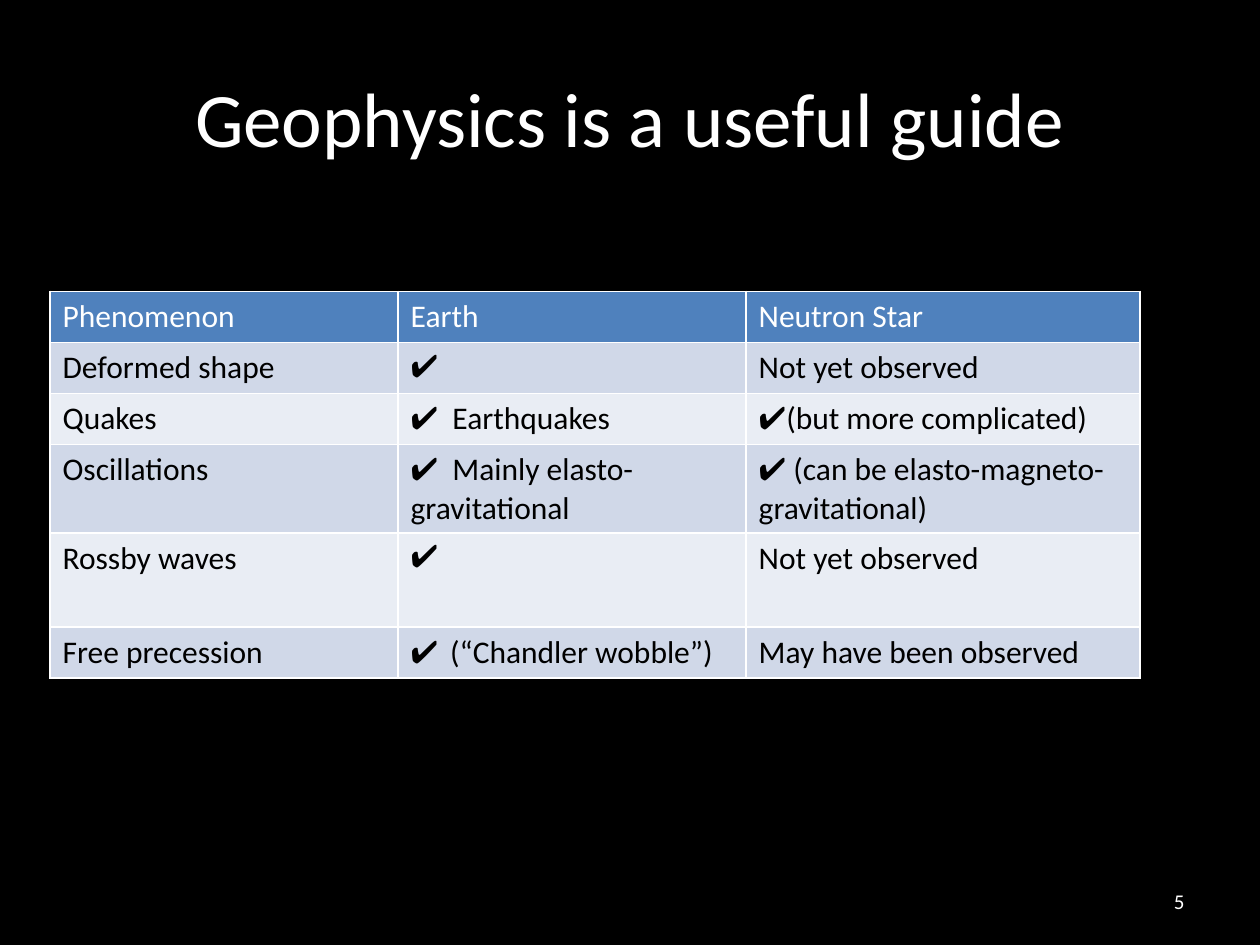
from dataclasses import dataclass

from lxml.etree import SubElement
from pptx import Presentation
from pptx.dml.color import RGBColor as RGB
from pptx.enum.text import MSO_ANCHOR as Anchor, PP_ALIGN as Align
from pptx.oxml.ns import qn
from pptx.util import Pt


@dataclass(frozen=True)
class Theme:
    background: RGB = RGB(0, 0, 0)
    light: RGB = RGB(255, 255, 255)
    dark: RGB = RGB(0, 0, 0)
    header: RGB = RGB(0x4F, 0x81, 0xBD)
    bands: tuple = (RGB(0xD0, 0xD8, 0xE8), RGB(0xE9, 0xED, 0xF4))
    face: str = "Calibri"
    check_face: str = "Arial"
    title_size: int = 44
    table_size: int = 18
    number_size: int = 12


THEME = Theme()
CHECK = "✔"
BULLET = "• "
COLUMN_WIDTHS = (198.9, 198.9, 225)
ROW_HEIGHTS = (29.2, 29.2, 29.2, 29.2, 53.8, 29.2)
PHENOMENA = (
    ("Phenomenon", "Earth", "Neutron Star"),
    ("Deformed shape", "✔", "Not yet observed"),
    ("Quakes", "✔  Earthquakes", "✔(but more complicated)"),
    ("Oscillations", "✔  Mainly elasto-gravitational",
     "✔ (can be elasto-magneto-gravitational)"),
    ("Rossby waves", "✔", "Not yet observed"),
    ("Free precession", BULLET + "(“Chandler wobble”)", "May have been observed"),
)


def style(paragraph, size, color):
    paragraph.font.name = THEME.face
    paragraph.font.size = Pt(size)
    paragraph.font.bold = False
    paragraph.font.color.rgb = color


def add_label(slide, text, left, top, width, height, size, align):
    label = slide.shapes.add_textbox(Pt(left), Pt(top), Pt(width), Pt(height))
    frame = label.text_frame
    frame.word_wrap = True
    frame.vertical_anchor = Anchor.MIDDLE
    line = frame.paragraphs[0]
    line.text = text
    line.alignment = align
    style(line, size, THEME.light)


def add_check_bullet(paragraph):
    properties = paragraph._p.get_or_add_pPr()
    properties.set("marL", str(Pt(22.5)))
    properties.set("indent", str(-Pt(22.5)))
    font = SubElement(properties, qn("a:buFont"))
    font.set("typeface", THEME.check_face)
    SubElement(properties, qn("a:buChar")).set("char", CHECK)


def add_borders(cell):
    properties = cell._tc.get_or_add_tcPr()
    for position, side in enumerate(("lnL", "lnR", "lnT", "lnB")):
        border = SubElement(properties, qn(f"a:{side}"))
        border.set("w", str(Pt(1)))
        fill = SubElement(border, qn("a:solidFill"))
        SubElement(fill, qn("a:srgbClr")).set("val", str(THEME.light))
        properties.insert(position, border)


def fill_cell(cell, text, fill, color):
    cell.fill.solid()
    cell.fill.fore_color.rgb = fill
    add_borders(cell)
    entry = cell.text_frame.paragraphs[0]
    if text.startswith(BULLET):
        add_check_bullet(entry)
        text = text.removeprefix(BULLET)
    if text.startswith(CHECK):
        mark = entry.add_run()
        mark.text = CHECK
        mark.font.name = THEME.check_face
        text = text.removeprefix(CHECK)
    if text:
        entry.add_run().text = text
    style(entry, THEME.table_size, color)


def add_comparison(slide, left, top):
    comparison = slide.shapes.add_table(
        len(PHENOMENA), len(COLUMN_WIDTHS), Pt(left), Pt(top),
        Pt(sum(COLUMN_WIDTHS)), Pt(sum(ROW_HEIGHTS))).table
    comparison.first_row = False
    comparison.horz_banding = False
    for column, width in zip(comparison.columns, COLUMN_WIDTHS):
        column.width = Pt(width)
    for index, (row, height, texts) in enumerate(
            zip(comparison.rows, ROW_HEIGHTS, PHENOMENA)):
        row.height = Pt(height)
        fill = THEME.bands[(index - 1) % 2] if index else THEME.header
        color = THEME.dark if index else THEME.light
        for cell, text in zip(row.cells, texts):
            fill_cell(cell, text, fill, color)


def main():
    deck = Presentation()
    deck.slide_width, deck.slide_height = Pt(720), Pt(540)
    slide = deck.slides.add_slide(deck.slide_layouts[6])
    slide.background.fill.solid()
    slide.background.fill.fore_color.rgb = THEME.background
    add_label(slide, "Geophysics is a useful guide", 36, 21.6, 648, 90,
              THEME.title_size, Align.CENTER)
    add_comparison(slide, 28.6, 166.5)
    add_label(slide, "5", 516, 500.5, 168, 28.75, THEME.number_size, Align.RIGHT)
    deck.save("out.pptx")


if __name__ == "__main__":
    main()
